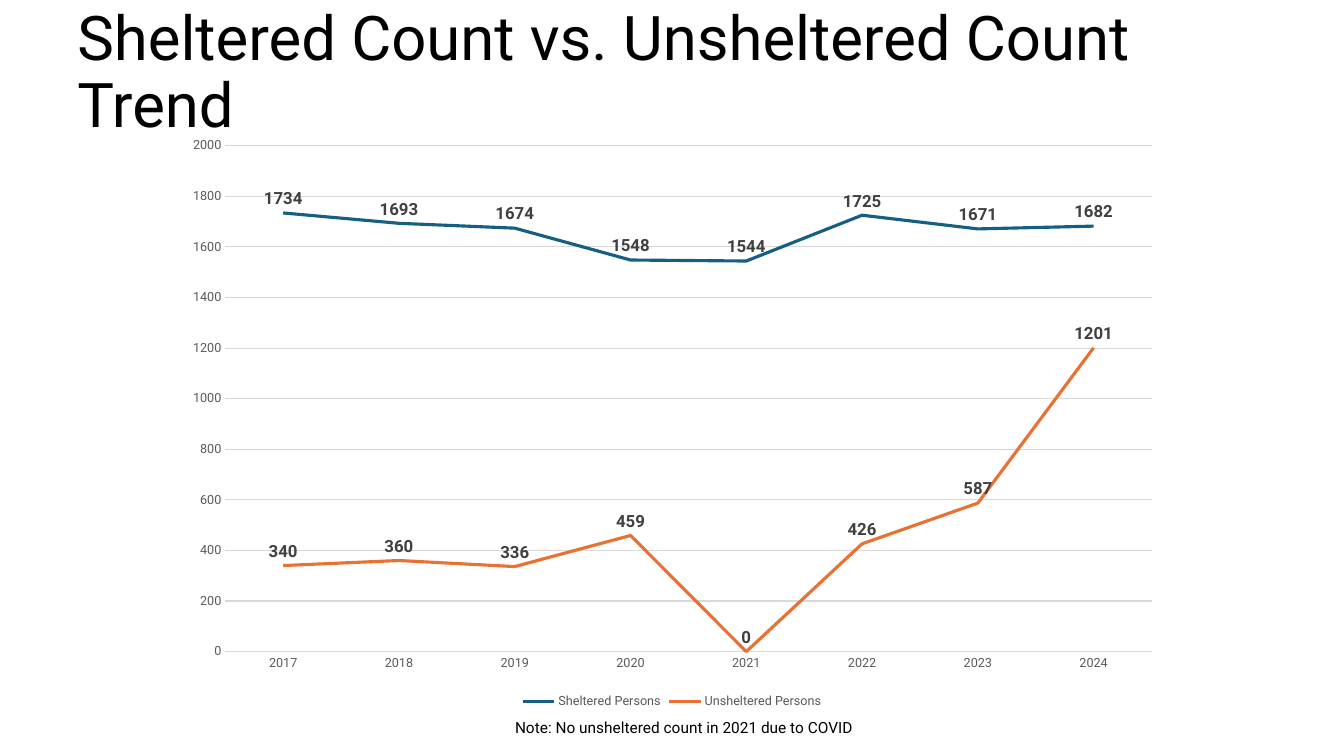
from pptx import Presentation
from pptx.chart.data import CategoryChartData
from pptx.dml.color import RGBColor
from pptx.enum.chart import XL_CHART_TYPE, XL_LABEL_POSITION, XL_LEGEND_POSITION, XL_MARKER_STYLE, XL_TICK_MARK
from pptx.enum.text import MSO_ANCHOR
from pptx.oxml import parse_xml
from pptx.oxml.ns import nsdecls, qn
from pptx.util import Pt

PX = 9144  # 100 px to the inch
FONT = "Roboto"


def set_font(font, size, color, bold=False):
    font.name, font.size, font.bold = FONT, Pt(size), bold
    font.color.rgb = RGBColor.from_string(color)


def add_text(s, box, text, size):
    tf = s.shapes.add_textbox(*[v * PX for v in box]).text_frame
    tf.word_wrap = True
    tf.text = text
    set_font(tf.paragraphs[0].runs[0].font, size, "000000")
    return tf


prs = Presentation()
prs.slide_width, prs.slide_height = 1333 * PX, 750 * PX
s = prs.slides.add_slide(prs.slide_layouts[6])

# Title
tf = add_text(s, (67, 0, 1200, 147), "Sheltered Count vs. Unsheltered Count Trend", 44)
tf.vertical_anchor = MSO_ANCHOR.MIDDLE
tf.paragraphs[0].line_spacing = 0.9

# Trend data
counts = [
    ("Sheltered Persons", "156082", (1734, 1693, 1674, 1548, 1544, 1725, 1671, 1682)),
    ("Unsheltered Persons", "E97132", (340, 360, 336, 459, 0, 426, 587, 1201)),
]
data = CategoryChartData()
data.categories = [str(year) for year in range(2017, 2025)]
for name, color, values in counts:
    data.add_series(name, values)

# Line chart and legend
box = [v * PX for v in (171, 126, 991, 581)]
chart = s.shapes.add_chart(XL_CHART_TYPE.LINE, *box, data).chart
set_font(chart.font, 10, "000000")
chart.has_title = False
chart.has_legend = True
chart.legend.position = XL_LEGEND_POSITION.BOTTOM
chart.legend.include_in_layout = False
set_font(chart.legend.font, 9, "595959")

# Axes
for axis in (chart.category_axis, chart.value_axis):
    axis.major_tick_mark = axis.minor_tick_mark = XL_TICK_MARK.NONE
    set_font(axis.tick_labels.font, 9, "595959")
chart.value_axis.minimum_scale = 0
chart.value_axis.maximum_scale = 2000
chart.value_axis.major_unit = 200
chart.value_axis.format.line.fill.background()
for line in (chart.category_axis.format.line, chart.value_axis.major_gridlines.format.line):
    line.color.rgb = RGBColor.from_string("D9D9D9")
    line.width = Pt(0.75)

# Series lines and value labels
for series, (name, color, values) in zip(chart.plots[0].series, counts):
    series.smooth = False
    series.marker.style = XL_MARKER_STYLE.NONE
    series.format.line.color.rgb = RGBColor.from_string(color)
    series.format.line.width = Pt(2.25)
    labels = series.data_labels
    labels.show_value = True
    labels.position = XL_LABEL_POSITION.ABOVE
    set_font(labels.font, 12, "404040", bold=True)

# Fixed inner plot area
plot_area = chart.plots[0]._element.getparent()
for layout in plot_area.findall(qn("c:layout")):
    plot_area.remove(layout)
sizes = "".join(f'<c:{k} val="{v}"/>' for k, v in (("x", 0.053), ("y", 0.032), ("w", 0.927), ("h", 0.864)))
plot_area.insert(0, parse_xml(
    f'<c:layout {nsdecls("c")}><c:manualLayout><c:layoutTarget val="inner"/>'
    f'<c:xMode val="edge"/><c:yMode val="edge"/>{sizes}</c:manualLayout></c:layout>'))

# Note
add_text(s, (501, 707, 420, 29), "Note: No unsheltered count in 2021 due to COVID", 11)

prs.save("out.pptx")
